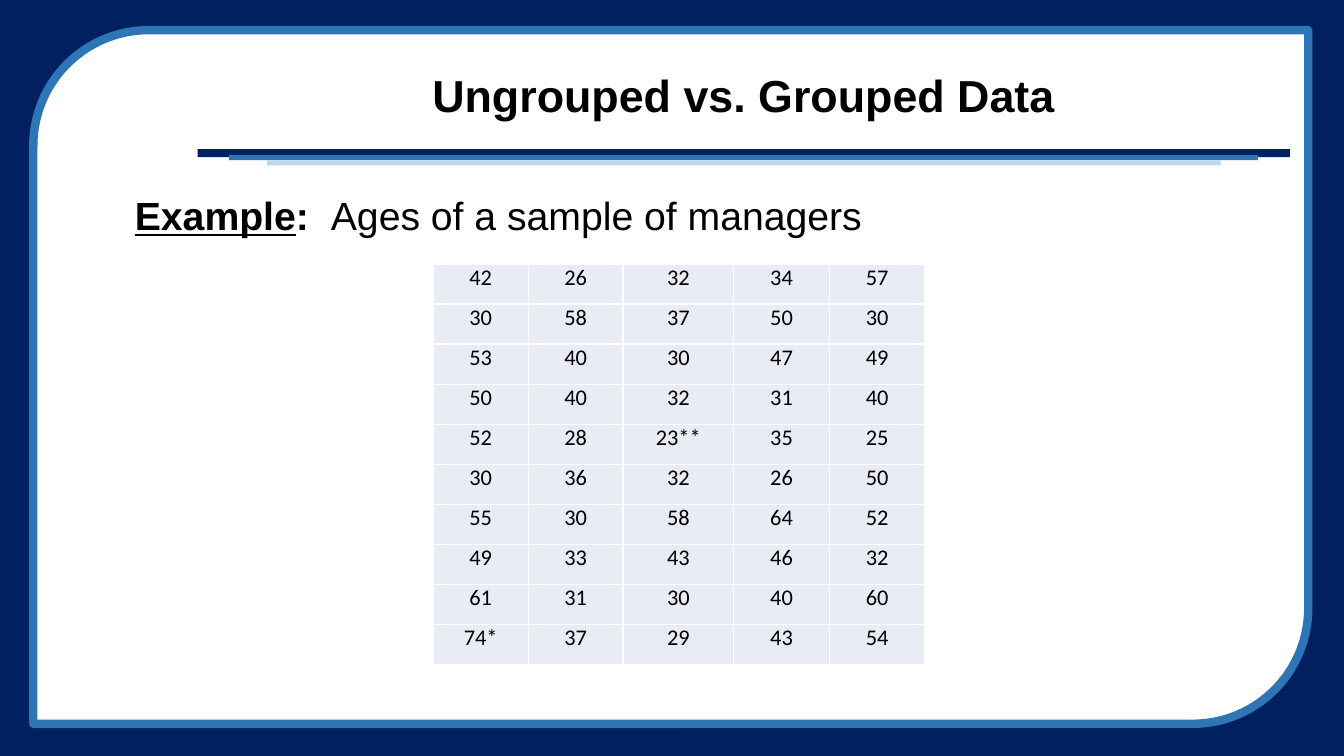
from dataclasses import dataclass

from lxml import etree
from pptx import Presentation
from pptx import util as u
from pptx.dml.color import RGBColor
from pptx.enum import shapes, text
from pptx.oxml import ns


@dataclass(frozen=True)
class Theme:
    navy: str = "002060"
    blue: str = "2E75B6"
    pale_blue: str = "BDD7EE"
    white: str = "FFFFFF"
    black: str = "000000"
    cell: str = "E9EBF5"
    heading_font: str = "Arial"
    table_font: str = "Calibri"
    title_size: int = 32
    body_size: int = 28
    cell_size: int = 16
    frame_line: int = 6
    cell_line: int = 1


THEME = Theme()
WIDTH, HEIGHT = 33.87, 19.05

AGES = """
42 26 32 34 57
30 58 37 50 30
53 40 30 47 49
50 40 32 31 40
52 28 23** 35 25
30 36 32 26 50
55 30 58 64 52
49 33 43 46 32
61 31 30 40 60
74* 37 29 43 54
"""
COLUMN_WIDTHS = (2.39, 2.39, 2.79, 2.41, 2.41)
ROW_HEIGHT = 1.01


def cm(*lengths):
    return [u.Cm(length) for length in lengths]


def add_panel(slide, kind, box, fill, line=None):
    panel = slide.shapes.add_shape(kind, *cm(*box))
    panel.shadow.inherit = False
    panel.fill.solid()
    panel.fill.fore_color.rgb = RGBColor.from_string(fill)
    if line:
        panel.line.color.rgb = RGBColor.from_string(line)
        panel.line.width = u.Pt(THEME.frame_line)
    else:
        panel.line.fill.background()


def style(run, font, size, bold=False, underline=False):
    run.font.name = font
    run.font.size = u.Pt(size)
    run.font.bold = bold
    run.font.underline = underline
    run.font.color.rgb = RGBColor.from_string(THEME.black)


def add_frame(slide, box):
    """Navy backdrop with a white panel rounded at two opposite corners."""
    left, top, width, height = box
    add_panel(slide, shapes.MSO_SHAPE.RECTANGLE, box, THEME.navy)
    inner = (left + 0.84, top + 0.76, width - 1.74, height - 1.57)
    add_panel(slide, shapes.MSO_SHAPE.ROUND_2_DIAG_RECTANGLE, inner,
              THEME.white, THEME.blue)


def add_title(slide, box):
    """Centred title with three stepped rules under it."""
    left, top, width, height = box
    title = slide.shapes.add_textbox(*cm(*box)).text_frame
    title.word_wrap = True
    title.vertical_anchor = text.MSO_ANCHOR.MIDDLE
    title.text = "Ungrouped vs. Grouped Data"
    heading = title.paragraphs[0]
    heading.alignment = text.PP_ALIGN.CENTER
    heading.line_spacing = 0.9
    style(heading.runs[0], THEME.heading_font, THEME.title_size, bold=True)

    rules = (
        (0, 2.52, width, 0.2, THEME.navy),
        (0.79, 2.67, 25.93, 0.13, THEME.blue),
        (1.75, 2.8, 24.03, 0.13, THEME.pale_blue),
    )
    for indent, drop, length, thickness, color in rules:
        add_panel(slide, shapes.MSO_SHAPE.RECTANGLE,
                  (left + indent, top + drop, length, thickness), color)


def add_example(slide, box):
    body = slide.shapes.add_textbox(*cm(*box)).text_frame
    body.word_wrap = True
    example = body.paragraphs[0]
    example.line_spacing = 0.9
    tabs = etree.SubElement(example._p.get_or_add_pPr(), ns.qn("a:tabLst"))
    etree.SubElement(tabs, ns.qn("a:tab"), pos=str(u.Cm(4.94)), algn="l")
    parts = (
        ("Example", True, True),
        (":\t", True, False),
        ("Ages of a sample of managers", False, False),
    )
    for wording, bold, underline in parts:
        run = example.add_run()
        run.text = wording
        style(run, THEME.heading_font, THEME.body_size, bold, underline)


def add_cell_borders(cell):
    properties = cell._tc.get_or_add_tcPr()
    for side in ("lnL", "lnR", "lnT", "lnB"):
        border = etree.SubElement(properties, ns.qn(f"a:{side}"),
                                  w=str(u.Pt(THEME.cell_line)))
        fill = etree.SubElement(border, ns.qn("a:solidFill"))
        etree.SubElement(fill, ns.qn("a:srgbClr"), val=THEME.white)


def add_ages_table(slide, left, top):
    ages = [row.split() for row in AGES.strip().splitlines()]
    table = slide.shapes.add_table(
        len(ages), len(COLUMN_WIDTHS),
        *cm(left, top, sum(COLUMN_WIDTHS), ROW_HEIGHT * len(ages))).table
    table.first_row = table.horz_banding = False
    for column, width in zip(table.columns, COLUMN_WIDTHS):
        column.width = u.Cm(width)
    for row, row_ages in zip(table.rows, ages):
        row.height = u.Cm(ROW_HEIGHT)
        for cell, age in zip(row.cells, row_ages):
            cell.margin_left = cell.margin_right = u.Cm(0.18)
            cell.margin_top = cell.margin_bottom = 0
            add_cell_borders(cell)
            cell.fill.solid()
            cell.fill.fore_color.rgb = RGBColor.from_string(THEME.cell)
            cell.text_frame.text = age
            entry = cell.text_frame.paragraphs[0]
            entry.alignment = text.PP_ALIGN.CENTER
            style(entry.runs[0], THEME.table_font, THEME.cell_size)


def main():
    deck = Presentation()
    deck.slide_width, deck.slide_height = cm(WIDTH, HEIGHT)
    slide = deck.slides.add_slide(deck.slide_layouts[6])
    add_frame(slide, (0, 0, WIDTH, HEIGHT))
    add_title(slide, (4.98, 1.24, 27.53, 2.46))
    add_example(slide, (3.15, 4.83, 28.8, 1.5))
    add_ages_table(slide, 10.92, 6.65)
    deck.save("out.pptx")


if __name__ == "__main__":
    main()
